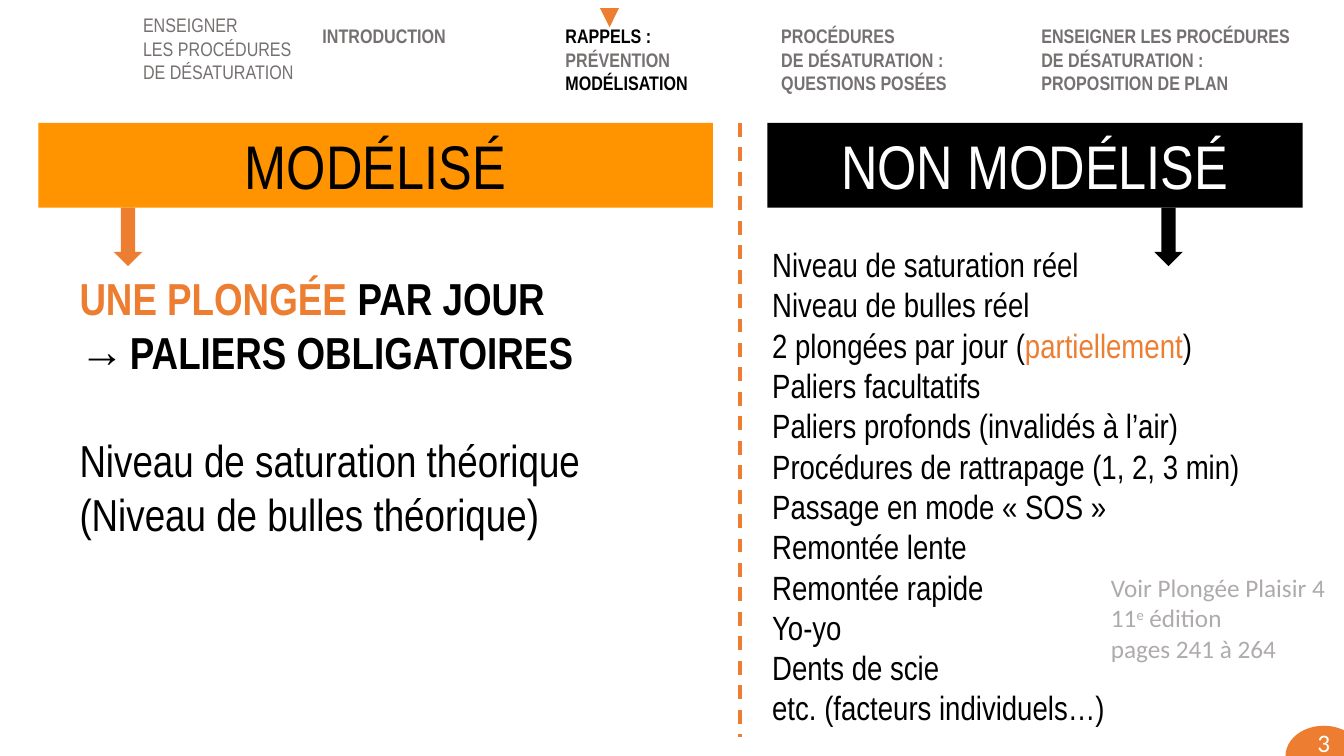
from lxml import etree
from pptx import Presentation
from pptx.dml.color import RGBColor
from pptx.enum.dml import MSO_LINE_DASH_STYLE as Dash
from pptx.enum.shapes import MSO_CONNECTOR, MSO_SHAPE
from pptx.enum.text import MSO_ANCHOR, MSO_AUTO_SIZE, PP_ALIGN
from pptx.oxml.ns import qn
from pptx.util import Inches, Pt

COLORS = {
    "orange": "ED7D31",
    "banner": "FF9300",
    "black": "000000",
    "white": "FFFFFF",
    "gray": "767171",
    "light": "AFABAB",
}
NARROW = "Arial Narrow"

presentation = Presentation()
presentation.slide_width = Inches(13.33)
presentation.slide_height = Inches(7.5)
slide = presentation.slides.add_slide(presentation.slide_layouts[6])


def add_filled(kind, left, top, width, height, color):
    shape = slide.shapes.add_shape(
        kind, Inches(left), Inches(top), Inches(width), Inches(height))
    shape.shadow.inherit = False
    shape.fill.solid()
    shape.fill.fore_color.rgb = RGBColor.from_string(COLORS[color])
    shape.line.fill.background()
    return shape


def write(shape, lines, size, color, font=NARROW, bold=False, align=PP_ALIGN.LEFT):
    """Fill a shape; each line is a list of (text, color or None for the default)."""
    frame = shape.text_frame
    for index, line in enumerate(lines):
        paragraph = frame.paragraphs[0] if index == 0 else frame.add_paragraph()
        paragraph.alignment = align
        for text, run_color in line:
            run = paragraph.add_run()
            run.text = text
            run.font.name = font
            run.font.size = Pt(size)
            run.font.bold = bold
            run.font.color.rgb = RGBColor.from_string(COLORS[run_color or color])
    return frame.paragraphs


# Page number
page_badge = add_filled(MSO_SHAPE.OVAL, 12.75, 7.2, 0.76, 0.6, "orange")
page_badge.text_frame.vertical_anchor = MSO_ANCHOR.MIDDLE
page_badge.text_frame.margin_top = 0
page_badge.text_frame.margin_bottom = Inches(0.26)
write(page_badge, [[("3", None)]], 18, "white", "Calibri", align=PP_ALIGN.CENTER)

# Column banners, each with its arrow
BANNER_TOP, BANNER_HEIGHT = 1.22, 0.84
banners = [
    ("MODÉLISÉ", 0.38, 6.69, "banner", "black", 1.13, "orange"),
    ("NON MODÉLISÉ", 7.61, 5.31, "black", "white", 11.45, "black"),
]
for title, left, width, fill, text_color, arrow_left, arrow_color in banners:
    banner = add_filled(
        MSO_SHAPE.RECTANGLE, left, BANNER_TOP, width, BANNER_HEIGHT, fill)
    banner.text_frame.vertical_anchor = MSO_ANCHOR.TOP
    write(banner, [[(title, None)]], 44, text_color, align=PP_ALIGN.CENTER)
    add_filled(MSO_SHAPE.DOWN_ARROW, arrow_left, BANNER_TOP + BANNER_HEIGHT,
               0.28, 0.58, arrow_color)

divider = slide.shapes.add_connector(
    MSO_CONNECTOR.STRAIGHT, Inches(7.34), Inches(BANNER_TOP), Inches(7.34), Inches(7.31))
divider.line.color.rgb = RGBColor.from_string(COLORS["orange"])
divider.line.width = Pt(2.5)
divider.line.dash_style = Dash.DASH
etree.SubElement(divider._element.spPr, qn("a:effectLst"))

# Marker above the current section
marker = add_filled(MSO_SHAPE.ISOSCELES_TRIANGLE, 5.95, 0.08, 0.19, 0.19, "orange")
marker.rotation = 180

# Text boxes: left, top, width, height, size, color, font, bold, lines
modelled = [
    [("UNE PLONGÉE ", "orange"), ("PAR JOUR", None)],
    [("PALIERS OBLIGATOIRES", None)],
    [("Niveau de saturation théorique", None)],
    [("(Niveau de bulles théorique)", None)],
]
not_modelled = [
    [("Niveau de saturation réel", None)],
    [("Niveau de bulles réel", None)],
    [("2 plongées par jour (", None), ("partiellement", "orange"), (")", None)],
    [("Paliers facultatifs", None)],
    [("Paliers profonds (invalidés à l’air)", None)],
    [("Procédures de rattrapage (1, 2, 3 min)", None)],
    [("Passage en mode « SOS »", None)],
    [("Remontée lente", None)],
    [("Remontée rapide", None)],
    [("Yo-yo", None)],
    [("Dents de scie", None)],
    [("etc. (facteurs individuels…)", None)],
]
course = [[("ENSEIGNER", None)], [("LES PROCÉDURES", None)], [("DE DÉSATURATION", None)]]
introduction = [[("INTRODUCTION", None)]]
reminders = [[("RAPPELS :", "black")], [("PRÉVENTION", None)], [("MODÉLISATION", "black")]]
questions = [
    [("PROCÉDURES", None)], [("DE DÉSATURATION :", None)], [("QUESTIONS POSÉES", None)]]
plan = [
    [("ENSEIGNER LES PROCÉDURES", None)],
    [("DE DÉSATURATION :", None)],
    [("PROPOSITION DE PLAN", None)],
]
reference = [
    [("Voir Plongée Plaisir 4", None)],
    [("11", None), ("e", None), (" édition", None)],
    [("pages 241 à 264", None)],
]
text_boxes = {
    "modelled": (0.69, 2.64, 5.22, 2.79, 32, "black", NARROW, True, modelled),
    "not modelled": (7.56, 2.37, 4.89, 4.95, 24, "black", NARROW, False, not_modelled),
    "course": (1.32, 0.08, 1.72, 0.81, 14, "gray", NARROW, False, course),
    "introduction": (3.1, 0.19, 1.68, 0.34, 14, "gray", NARROW, True, introduction),
    "reminders": (5.51, 0.19, 1.42, 0.81, 14, "gray", NARROW, True, reminders),
    "questions": (7.65, 0.19, 1.85, 0.81, 14, "gray", NARROW, True, questions),
    "plan": (10.23, 0.19, 2.68, 0.81, 14, "gray", NARROW, True, plan),
    "reference": (10.92, 5.63, 2.35, 1.01, 18, "light", "Calibri", False, reference),
}
paragraphs = {}
for name, (left, top, width, height, size, color, font, bold, lines) in text_boxes.items():
    box = slide.shapes.add_textbox(
        Inches(left), Inches(top), Inches(width), Inches(height))
    box.text_frame.word_wrap = name == "introduction"
    box.text_frame.auto_size = MSO_AUTO_SIZE.SHAPE_TO_FIT_TEXT
    paragraphs[name] = write(box, lines, size, color, font, bold)

# Arrow bullet, gap and regular weight in the left column
_, stops, theory, bubbles = paragraphs["modelled"]
properties = stops._p.get_or_add_pPr()
properties.set("marL", str(Inches(0.5)))
properties.set("indent", str(-Inches(0.5)))
etree.SubElement(properties, qn("a:buFont"), typeface="Arial")
etree.SubElement(properties, qn("a:buChar"), char="→")
theory.space_before = Pt(38.5)
for paragraph in (theory, bubbles):
    paragraph.runs[0].font.bold = False

# Superscript of the edition number
paragraphs["reference"][1].runs[1]._r.get_or_add_rPr().set("baseline", "30000")

presentation.save("out.pptx")
